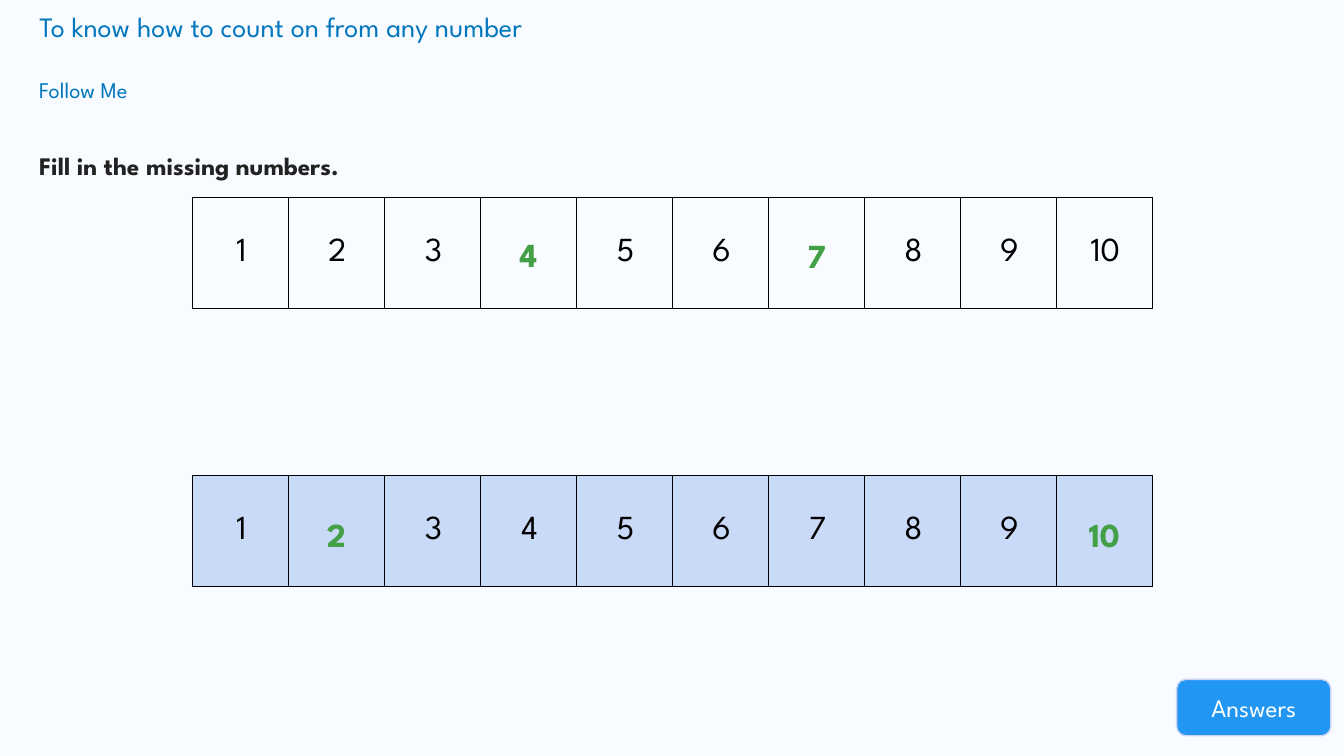
import dataclasses

import lxml.etree
import pptx
import pptx.dml.color
import pptx.enum.shapes
import pptx.enum.text
import pptx.oxml.ns
import pptx.util

Inches = pptx.util.Inches
Align = pptx.enum.text.PP_ALIGN
Anchor = pptx.enum.text.MSO_ANCHOR


@dataclasses.dataclass(frozen=True)
class Theme:
    font: str = "League Spartan"
    background: str = "F8FBFF"
    heading: str = "0277BD"
    instruction: str = "222222"
    number: str = "000000"
    answer: str = "43A047"
    strip: str = "C9DAF8"
    button: str = "2196F3"
    button_line: str = "CCD4F4"
    button_text: str = "FFFFFF"
    title_size: int = 20
    subtitle_size: int = 16
    body_size: int = 18
    number_size: int = 24


THEME = Theme()
COLUMN_WIDTH = 0.952
STRIP_LEFT = 1.91
STRIP_HEIGHT = 1.1


def rgb(value):
    return pptx.dml.color.RGBColor.from_string(value)


def set_attributes(target, values):
    for name, value in values.items():
        setattr(target, name, value)


def write_text(frame, text, size, color, bold=False, **paragraph_format):
    paragraph = frame.paragraphs[0]
    paragraph.text = text
    set_attributes(paragraph, paragraph_format)
    font = paragraph.runs[0].font
    set_attributes(font, {"name": THEME.font, "size": pptx.util.Pt(size), "bold": bold})
    font.color.rgb = rgb(color)


def add_title(slide, text, left, top, width, height):
    title = slide.shapes.title
    set_attributes(title, {"left": Inches(left), "top": Inches(top),
                           "width": Inches(width), "height": Inches(height)})
    set_attributes(title.text_frame, {"word_wrap": True, "vertical_anchor": Anchor.TOP,
                                      "auto_size": pptx.enum.text.MSO_AUTO_SIZE.NONE})
    write_text(title.text_frame, text, THEME.title_size, THEME.heading, alignment=Align.LEFT)


def add_text(slide, text, box, size, color, frame_format=None, **text_format):
    shape = slide.shapes.add_textbox(*map(Inches, box))
    set_attributes(shape.text_frame, {"word_wrap": True, **(frame_format or {})})
    write_text(shape.text_frame, text, size, color, **text_format)


def add_button(slide, text, box):
    shape = slide.shapes.add_shape(
        pptx.enum.shapes.MSO_SHAPE.ROUNDED_RECTANGLE, *map(Inches, box))
    shape.shadow.inherit = False
    shape.fill.solid()
    shape.fill.fore_color.rgb = rgb(THEME.button)
    shape.line.color.rgb = rgb(THEME.button_line)
    shape.line.width = pptx.util.Pt(1)
    shape.text_frame.vertical_anchor = Anchor.MIDDLE
    write_text(shape.text_frame, text, THEME.body_size, THEME.button_text,
               alignment=Align.CENTER)


def add_borders(cell, color):
    qn = pptx.oxml.ns.qn
    properties = cell._tc.get_or_add_tcPr()
    for index, side in enumerate(("lnL", "lnR", "lnT", "lnB")):
        line = lxml.etree.Element(qn(f"a:{side}"), w=str(pptx.util.Pt(1)))
        fill = lxml.etree.SubElement(line, qn("a:solidFill"))
        lxml.etree.SubElement(fill, qn("a:srgbClr"), val=color)
        properties.insert(index, line)


def add_answer(slide, number, top):
    left = STRIP_LEFT + (number - 1) * COLUMN_WIDTH
    inset = Inches(0.1)
    frame_format = {"vertical_anchor": Anchor.MIDDLE, "margin_left": inset,
                    "margin_right": inset, "margin_top": inset, "margin_bottom": inset}
    add_text(slide, str(number), (left, top, COLUMN_WIDTH, 1.06), THEME.number_size,
             THEME.answer, frame_format, bold=True, alignment=Align.CENTER, line_spacing=1.15)


def add_number_strip(slide, top, answer_offsets, fill=None):
    count = 10
    table = slide.shapes.add_table(
        1, count, Inches(STRIP_LEFT), Inches(top),
        Inches(COLUMN_WIDTH * count), Inches(STRIP_HEIGHT)).table
    set_attributes(table, {"first_row": False, "horz_banding": False})
    for number, cell in enumerate(table.iter_cells(), 1):
        cell.vertical_anchor = Anchor.MIDDLE
        if fill:
            cell.fill.solid()
            cell.fill.fore_color.rgb = rgb(fill)
        else:
            cell.fill.background()
        add_borders(cell, THEME.number)
        if number not in answer_offsets:
            write_text(cell.text_frame, str(number), THEME.number_size, THEME.number,
                       alignment=Align.CENTER)
            paragraph = cell.text_frame.paragraphs[0]
            paragraph._p.get_or_add_pPr().set("marL", str(Inches(0.02)))
    for number, offset in answer_offsets.items():
        add_answer(slide, number, top + offset)


def main():
    presentation = pptx.Presentation()
    set_attributes(presentation, {"slide_width": Inches(13.33), "slide_height": Inches(7.5)})
    slide = presentation.slides.add_slide(presentation.slide_layouts[5])
    slide.background.fill.solid()
    slide.background.fill.fore_color.rgb = rgb(THEME.background)

    add_title(slide, "To know how to count on from any number", 0.29, 0.04, 12.34, 0.44)
    add_text(slide, "Follow Me", (0.29, 0.71, 2.97, 0.46), THEME.subtitle_size, THEME.heading)
    add_text(slide, "Fill in the missing numbers.", (0.29, 1.29, 12.84, 0.56),
             THEME.body_size, THEME.instruction, bold=True, line_spacing=1.5)
    add_button(slide, "Answers", (11.67, 6.74, 1.53, 0.56))
    add_number_strip(slide, 1.96, {4: 0, 7: 0.01})
    add_number_strip(slide, 4.72, {2: 0.02, 10: 0.02}, THEME.strip)

    presentation.save("out.pptx")


if __name__ == "__main__":
    main()
